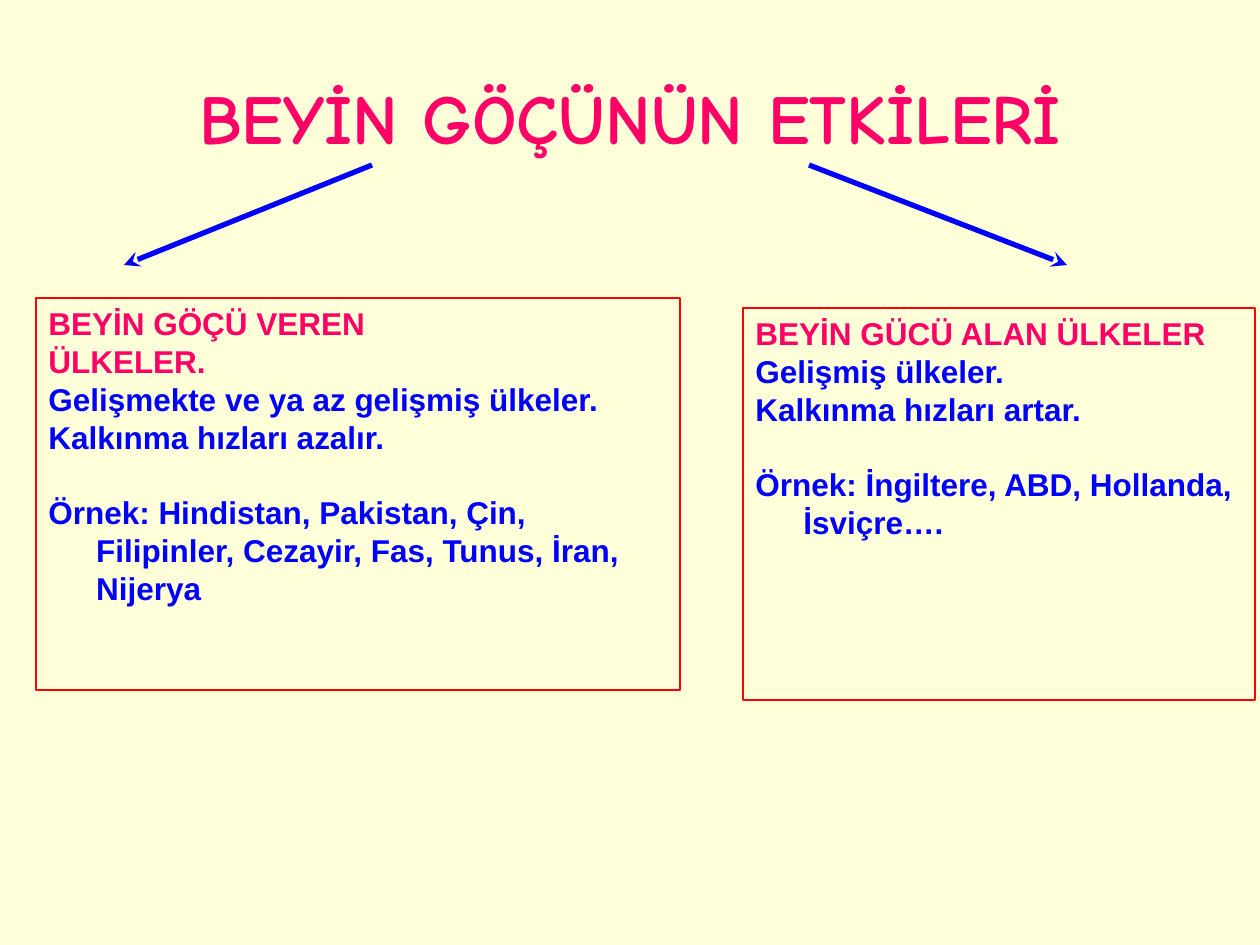
from dataclasses import dataclass

from lxml.etree import SubElement
from pptx import Presentation
from pptx.dml.color import RGBColor
from pptx.enum.shapes import MSO_CONNECTOR, MSO_SHAPE
from pptx.enum.text import MSO_ANCHOR, MSO_AUTO_SIZE, PP_ALIGN
from pptx.oxml.ns import qn
from pptx.util import Emu, Inches, Pt

EMU_PER_PX = 914400 / 126


@dataclass(frozen=True)
class Theme:
    """Colours, fonts and sizes of the slide."""
    background: RGBColor = RGBColor.from_string("FFFFD9")
    heading: RGBColor = RGBColor.from_string("FF0066")
    accent: RGBColor = RGBColor.from_string("0000FF")
    border: RGBColor = RGBColor.from_string("FF0000")
    title_font: str = "Comic Neue"
    body_font: str = "Arial"
    title_size: Pt = Pt(40)
    body_size: Pt = Pt(18)
    example_gap: Pt = Pt(21.5)
    border_width: Pt = Pt(0.75)
    arrow_width: Pt = Pt(3)


THEME = Theme()

GIVING_COUNTRIES = (
    ["BEYİN GÖÇÜ VEREN", "ÜLKELER."],
    ["Gelişmekte ve ya az gelişmiş ülkeler.", "Kalkınma hızları azalır."],
    "Örnek: Hindistan, Pakistan, Çin, Filipinler, Cezayir, Fas, Tunus, İran, Nijerya",
)
RECEIVING_COUNTRIES = (
    ["BEYİN GÜCÜ ALAN ÜLKELER"],
    ["Gelişmiş ülkeler.", "Kalkınma hızları artar."],
    "Örnek: İngiltere, ABD, Hollanda, İsviçre….",
)


def px(length):
    """Turn whole pixels into EMU."""
    return Emu(round(length * EMU_PER_PX))


def add_run(paragraph, text, font, size, color):
    """Append one bold run to a paragraph."""
    run = paragraph.add_run()
    run.text = text
    run.font.name = font
    run.font.size = size
    run.font.bold = True
    run.font.color.rgb = color


def set_title(slide, text, left, top, width, height):
    """Place and fill the title placeholder."""
    title = slide.shapes.title
    title.left, title.top, title.width, title.height = map(px, (left, top, width, height))
    frame = title.text_frame
    frame.vertical_anchor = MSO_ANCHOR.MIDDLE
    paragraph = frame.paragraphs[0]
    paragraph.alignment = PP_ALIGN.CENTER
    add_run(paragraph, text, THEME.title_font, THEME.title_size, THEME.heading)


def add_arrow(slide, start, end):
    """Draw an arrow from start to end."""
    arrow = slide.shapes.add_connector(MSO_CONNECTOR.STRAIGHT, *map(px, start + end))
    arrow.line.color.rgb = THEME.accent
    arrow.line.width = THEME.arrow_width
    SubElement(arrow.line._get_or_add_ln(), qn("a:tailEnd"), type="stealth")
    SubElement(arrow._element.spPr, qn("a:effectLst"))


def add_country_box(slide, content, left, top, width, height):
    """Add an outlined box with a heading, effects and examples."""
    box = slide.shapes.add_shape(MSO_SHAPE.RECTANGLE, *map(px, (left, top, width, height)))
    box.shadow.inherit = False
    box.fill.background()
    box.line.color.rgb = THEME.border
    box.line.width = THEME.border_width
    frame = box.text_frame
    frame.word_wrap = True
    frame.auto_size = MSO_AUTO_SIZE.NONE
    frame.vertical_anchor = MSO_ANCHOR.TOP

    headings, effects, examples = content
    lines = [(text, THEME.heading) for text in headings]
    lines += [(text, THEME.accent) for text in effects + [examples]]
    for index, (text, color) in enumerate(lines):
        paragraph = frame.add_paragraph() if index else frame.paragraphs[0]
        paragraph.alignment = PP_ALIGN.LEFT
        properties = paragraph._p.get_or_add_pPr()
        properties.set("marL", str(Inches(0.38)))
        properties.set("indent", str(-Inches(0.38)))
        add_run(paragraph, text, THEME.body_font, THEME.body_size, color)
    paragraph.space_before = THEME.example_gap


def main():
    """Build and save the slide."""
    presentation = Presentation()
    presentation.slide_width, presentation.slide_height = px(1260), px(945)
    slide = presentation.slides.add_slide(presentation.slide_layouts[5])
    slide.background.fill.solid()
    slide.background.fill.fore_color.rgb = THEME.background

    set_title(slide, "BEYİN GÖÇÜNÜN ETKİLERİ", 63, 38, 1134, 158)
    add_arrow(slide, (809, 165), (1067, 265))
    add_arrow(slide, (372, 165), (124, 265))
    add_country_box(slide, GIVING_COUNTRIES, 36, 298, 644, 392)
    add_country_box(slide, RECEIVING_COUNTRIES, 743, 308, 512, 392)
    presentation.save("out.pptx")


if __name__ == "__main__":
    main()
